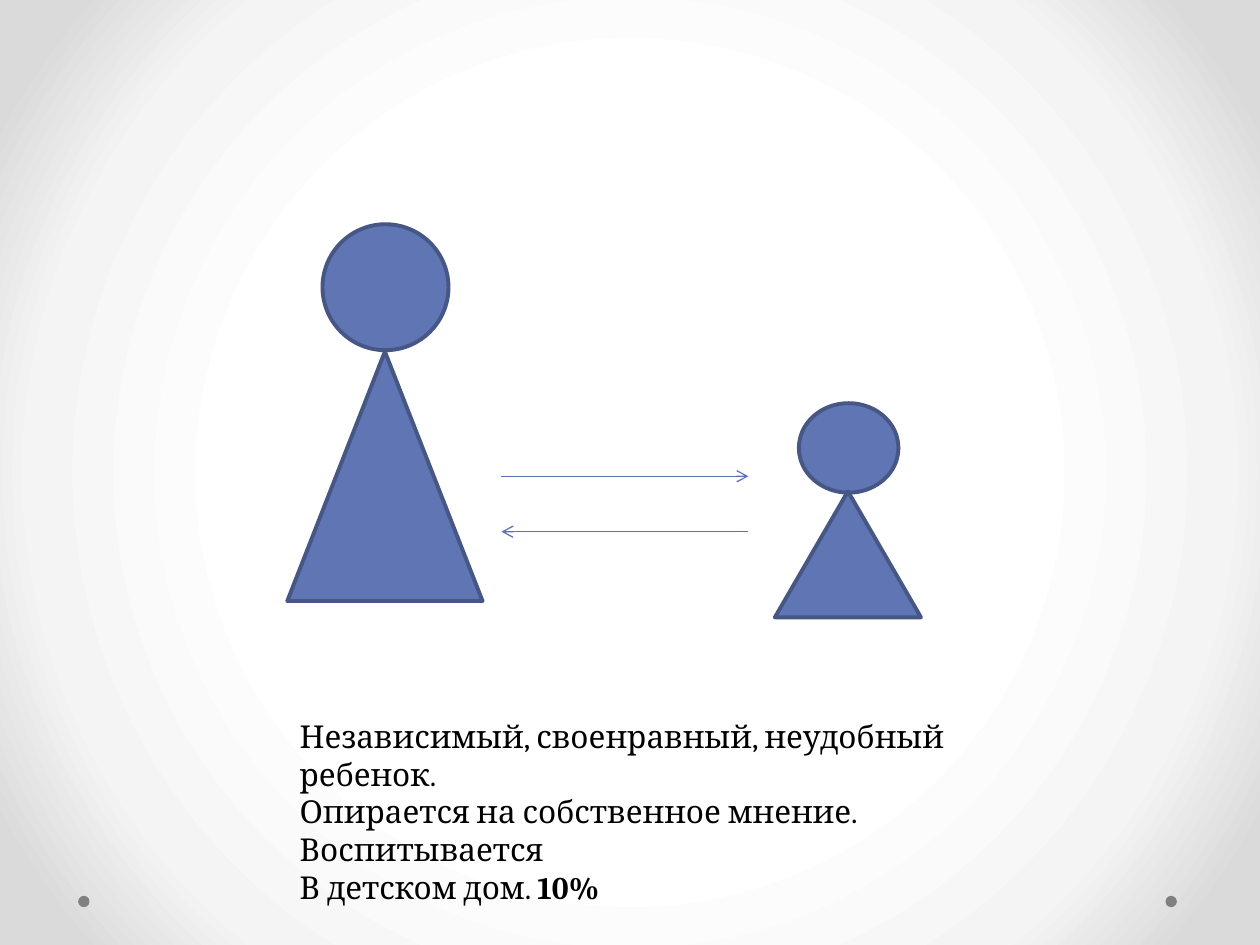
from lxml import etree
from pptx import Presentation
from pptx.dml.color import RGBColor
from pptx.enum.shapes import MSO_CONNECTOR, MSO_SHAPE
from pptx.enum.text import MSO_AUTO_SIZE
from pptx.oxml import parse_xml
from pptx.oxml.ns import nsdecls, qn
from pptx.util import Inches, Pt

OVAL = MSO_SHAPE.OVAL
TRIANGLE = MSO_SHAPE.ISOSCELES_TRIANGLE
STRAIGHT = MSO_CONNECTOR.STRAIGHT
GROW = MSO_AUTO_SIZE.SHAPE_TO_FIT_TEXT

BLACK = RGBColor(0x00, 0x00, 0x00)
GRAY = RGBColor(0x80, 0x80, 0x80)
BLUE = RGBColor(0x60, 0x76, 0xB4)
OUTLINE_BLUE = RGBColor(0x47, 0x57, 0x85)
ARROW_BLUE = RGBColor(0x5C, 0x72, 0xB2)
BACKGROUND_STOPS = [
    (50, RGBColor(0xFF, 0xFF, 0xFF)),
    (76, RGBColor(0xF4, 0xF4, 0xF4)),
    (92, RGBColor(0xDA, 0xDA, 0xDA)),
]


class SlideBuilder:
    font = "Cambria"
    text_size = Pt(18)

    def __init__(self, slide):
        self.slide = slide

    def radial_background(self, stops):
        self.slide.background.fill.solid()
        properties = self.slide.element.find(".//" + qn("p:bgPr"))
        stop_xml = "".join(
            f'<a:gs pos="{position * 1000}"><a:srgbClr val="{color}"/></a:gs>'
            for position, color in stops
        )
        gradient = parse_xml(
            f'<a:gradFill {nsdecls("a")} rotWithShape="1"><a:gsLst>{stop_xml}</a:gsLst>'
            '<a:path path="circle">'
            '<a:fillToRect l="50000" t="50000" r="50000" b="50000"/>'
            "</a:path></a:gradFill>"
        )
        properties.replace(properties.find(qn("a:solidFill")), gradient)

    def shape(self, kind, left, top, width, height, fill, outline=None):
        shape = self.slide.shapes.add_shape(
            kind, Inches(left), Inches(top), Inches(width), Inches(height)
        )
        shape.shadow.inherit = False
        shape.fill.solid()
        shape.fill.fore_color.rgb = fill
        if outline is None:
            shape.line.fill.background()
        else:
            shape.line.color.rgb = outline
            shape.line.width = Pt(2.25)

    def person(self, head, body):
        """Draw a round head on a triangular body; each is left, top, width, height."""
        self.shape(OVAL, *head, BLUE, OUTLINE_BLUE)
        self.shape(TRIANGLE, *body, BLUE, OUTLINE_BLUE)

    def arrow(self, start_x, end_x, y):
        connector = self.slide.shapes.add_connector(
            STRAIGHT, Inches(start_x), Inches(y), Inches(end_x), Inches(y)
        )
        connector.line.color.rgb = ARROW_BLUE
        connector.line.width = Pt(0.75)
        line = connector.line._get_or_add_ln()
        etree.SubElement(line, qn("a:tailEnd")).set("type", "arrow")
        etree.SubElement(connector.element.spPr, qn("a:effectLst"))

    def text(self, left, top, width, height, paragraphs):
        """Each paragraph is a list of (text, bold) runs."""
        box = self.slide.shapes.add_textbox(
            Inches(left), Inches(top), Inches(width), Inches(height)
        )
        frame = box.text_frame
        frame.word_wrap = True
        frame.auto_size = GROW
        for index, runs in enumerate(paragraphs):
            paragraph = frame.add_paragraph() if index else frame.paragraphs[0]
            for content, bold in runs:
                run = paragraph.add_run()
                run.text = content
                run.font.name = self.font
                run.font.size = self.text_size
                run.font.bold = bold
                run.font.color.rgb = BLACK


def main():
    presentation = Presentation()
    presentation.slide_width = Inches(10)
    presentation.slide_height = Inches(7.5)
    blank_layout = presentation.slide_layouts[6]
    builder = SlideBuilder(presentation.slides.add_slide(blank_layout))

    builder.radial_background(BACKGROUND_STOPS)
    for dot_left in (9.25, 0.62):
        builder.shape(OVAL, dot_left, 7.11, 0.09, 0.09, GRAY)

    builder.person(head=(2.56, 1.78, 1, 1), body=(2.28, 2.79, 1.55, 1.98))
    builder.person(head=(6.34, 3.2, 0.79, 0.71), body=(6.15, 3.9, 1.16, 1))
    builder.arrow(3.98, 5.94, 3.78)
    builder.arrow(5.94, 3.98, 4.22)

    builder.text(2.28, 5.64, 6.1, 1.01, [
        [("Независимый, своенравный, неудобный ребенок.", False)],
        [("Опирается на собственное мнение. Воспитывается", False)],
        [("В детском дом. ", False), ("10%", True)],
    ])
    presentation.save("out.pptx")


if __name__ == "__main__":
    main()
